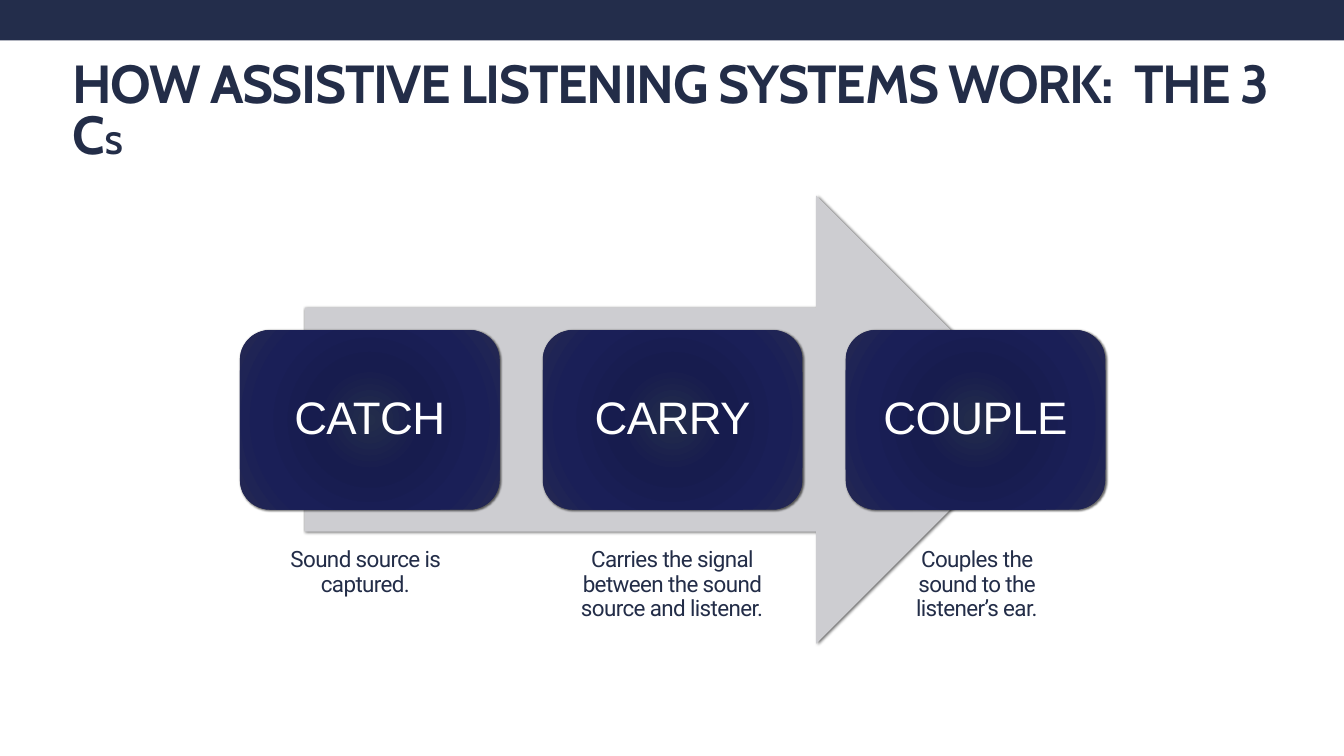
"""Build the slide on the three Cs of assistive listening systems."""
from lxml import etree
from pptx import Presentation, util as u
from pptx.dml import color
from pptx.enum import shapes, text
from pptx.oxml import ns, parse_xml

COLOURS = {"bar": "232D4B", "ink": "232D48", "arrow": "CDCDD1", "label": "FFFFFF", "shadow": "000000"}
CARD_STOPS = [(0, "232D4B"), (34, "171C4E"), (70, "1A1F57"), (100, "242852")]
STEPS = [
    ("CATCH", "Sound source is captured.", 396, 252),
    ("CARRY", "Carries the signal between the sound source and listener.", 813.6, 293),
    ("COUPLE", "Couples the sound to the listener’s ear.", 1266.5, 257.8),
]


class Deck:
    """Holds the style and the current slide."""

    def __init__(self, presentation):
        self.slide = presentation.slides.add_slide(presentation.slide_layouts[5])

    def style_run(self, run, size, font, colour, spacing, bold=False):
        """Format one run of text."""
        run.font.size, run.font.name, run.font.bold = u.Pt(size), font, bold
        run.font.color.rgb = color.RGBColor.from_string(COLOURS[colour])
        run.font._element.set("spc", str(int(spacing * 100)))

    def centre(self, frame, words, size, font, colour):
        """Put one centred paragraph into a text frame."""
        frame.word_wrap = True
        frame.text = words
        paragraph = frame.paragraphs[0]
        paragraph.alignment = text.PP_ALIGN.CENTER
        paragraph.line_spacing = 0.9
        self.style_run(paragraph.runs[0], size, font, colour, -0.9)
        return paragraph

    def title(self, words, suffix, *box):
        """Fill the title placeholder, with a smaller suffix."""
        heading = self.slide.shapes.title
        heading.left, heading.top, heading.width, heading.height = map(u.Pt, box)
        frame = heading.text_frame
        frame.auto_size = text.MSO_AUTO_SIZE.NONE
        frame.vertical_anchor = text.MSO_ANCHOR.MIDDLE
        paragraph = frame.paragraphs[0]
        paragraph.alignment = text.PP_ALIGN.LEFT
        paragraph.line_spacing = 0.8
        for part, size in ((words, 76.5), (suffix, 44.1)):
            run = paragraph.add_run()
            run.text = part
            self.style_run(run, size, "Cabin", "ink", -2, bold=True)

    def block(self, kind, fill, *box):
        """Add a flat, unlined preset shape."""
        shape = self.slide.shapes.add_shape(kind, *map(u.Pt, box))
        shape.shadow.inherit = False
        shape.line.fill.background()
        if fill:
            shape.fill.solid()
            shape.fill.fore_color.rgb = color.RGBColor.from_string(COLOURS[fill])
        return shape

    def cast_shadow(self, shape):
        """Give a shape a soft shadow to the lower right."""
        effects = shape._element.spPr.find(ns.qn("a:effectLst"))
        shadow = etree.SubElement(effects, ns.qn("a:outerShdw"), blurRad=str(u.Pt(3)),
                                  dist=str(u.Pt(2)), dir="2700000", algn="ctr", rotWithShape="0")
        tint = etree.SubElement(shadow, ns.qn("a:srgbClr"), val=COLOURS["shadow"])
        etree.SubElement(tint, ns.qn("a:alpha"), val="60000")

    def arrow(self, *box):
        """Add the wide arrow behind the cards."""
        self.cast_shadow(self.block(shapes.MSO_SHAPE.RIGHT_ARROW, "arrow", *box))

    def card(self, words, *box):
        """Add a rounded card with a radial gradient."""
        card = self.block(shapes.MSO_SHAPE.ROUNDED_RECTANGLE, None, *box)
        self.cast_shadow(card)
        stops = "".join(f'<a:gs pos="{pos * 1000}"><a:srgbClr val="{tone}"/></a:gs>'
                        for pos, tone in CARD_STOPS)
        gradient = parse_xml(
            f'<a:gradFill {ns.nsdecls("a")} rotWithShape="1"><a:gsLst>{stops}</a:gsLst><a:path path="circle">'
            '<a:fillToRect l="100000" t="100000" r="100000" b="100000"/></a:path></a:gradFill>')
        card._element.spPr.find(ns.qn("a:prstGeom")).addnext(gradient)
        frame = card.text_frame
        frame.vertical_anchor = text.MSO_ANCHOR.MIDDLE
        frame.margin_left = frame.margin_right = frame.margin_top = frame.margin_bottom = u.Pt(19.5)
        self.centre(frame, words, 65, "Arial", "label")

    def caption(self, words, *box):
        """Add the explanation below a card."""
        frame = self.slide.shapes.add_textbox(*map(u.Pt, box)).text_frame
        frame.auto_size = text.MSO_AUTO_SIZE.SHAPE_TO_FIT_TEXT
        self.centre(frame, words, 32, "Roboto", "ink").space_before = u.Pt(45)


def main():
    """Build and save the slide."""
    presentation = Presentation()
    presentation.slide_width, presentation.slide_height = u.Pt(1920), u.Pt(1080)
    deck = Deck(presentation)
    deck.block(shapes.MSO_SHAPE.RECTANGLE, "bar", 0, 0, 1920, 57.6)
    deck.title("HOW ASSISTIVE LISTENING SYSTEMS WORK:  THE 3 C", "S", 96, 84, 1728, 156)
    deck.arrow(435.5, 279.5, 1050.5, 640)
    for index, (name, explanation, left, width) in enumerate(STEPS):
        deck.card(name, 342.7 + index * 432.7, 471.6, 371, 256.3)
        deck.caption(explanation, left, 780, width, 85)
    presentation.save("out.pptx")


if __name__ == "__main__":
    main()
